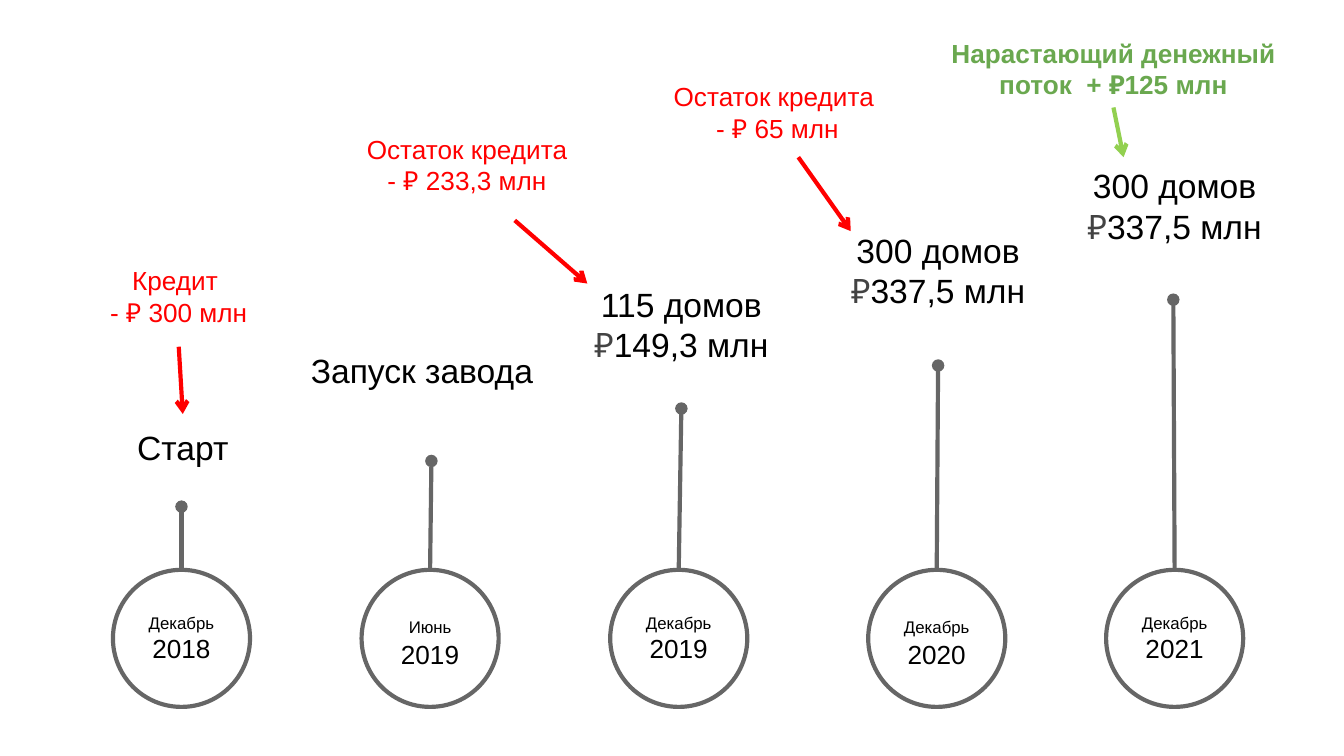
"""Build the house factory timeline slide: credit balance and sales by date."""
from lxml.etree import SubElement
from pptx import Presentation
from pptx.dml.color import RGBColor
from pptx.enum.shapes import MSO_CONNECTOR, MSO_SHAPE
from pptx.enum.text import MSO_ANCHOR as ANCHOR, MSO_AUTO_SIZE as AUTO, PP_ALIGN as ALIGN
from pptx.oxml.ns import qn
from pptx.util import Inches, Pt

BLACK = RGBColor(0, 0, 0)
GRAY = RGBColor(0x66, 0x66, 0x66)
DARK = RGBColor(0x43, 0x43, 0x43)
RED = RGBColor(0xFF, 0, 0)
GREEN = RGBColor(0x6A, 0xA8, 0x4F)
LIME = RGBColor(0x92, 0xD0, 0x50)

CIRCLE_TOP, CIRCLE_SIZE = 4.24, 1.02


def write(sp, paragraphs, size=18, color=BLACK, bold=False, anchor=ANCHOR.TOP, inset=0.1):
    tf = sp.text_frame
    tf.word_wrap = True
    tf.vertical_anchor = anchor
    tf.margin_left = tf.margin_right = Inches(0.1)
    tf.margin_top = tf.margin_bottom = Inches(inset)
    for i, runs in enumerate(paragraphs):
        p = tf.add_paragraph() if i else tf.paragraphs[0]
        p.alignment = ALIGN.CENTER
        for text, *own_size in runs:
            if text == "\n":
                p.add_line_break()
                continue
            r = p.add_run()
            r.text = text
            r.font.name = "Arial"
            r.font.size = Pt(own_size[0] if own_size else size)
            r.font.bold = bold
            r.font.color.rgb = DARK if text == "₽" else color


def add_line(start, end, color, end_tag, end_type):
    points = [Inches(v) for v in (*start, *end)]
    line = slide.shapes.add_connector(MSO_CONNECTOR.STRAIGHT, *points)
    line.line.color.rgb = color
    line.line.width = Pt(2.25)
    SubElement(line.line._get_or_add_ln(), qn(end_tag), type=end_type)
    SubElement(line._element.spPr, qn("a:effectLst"))
    return line


prs = Presentation()
prs.slide_width = Inches(10)
prs.slide_height = prs.slide_width * 9 // 16
slide = prs.slides.add_slide(prs.slide_layouts[6])

milestones = [
    (0.84, [[("Декабрь", 9)], [("2018", 14)]], (1.35, 3.77)),
    (2.69, [[("Июнь", 9), (" 2019", 14)]], (3.21, 3.43)),
    (4.54, [[("Декабрь", 9)], [("2019", 14)]], (5.07, 3.04)),
    (6.46, [[("Декабрь", 9), (" 2020", 14)]], (6.98, 2.72)),
    (8.23, [[("Декабрь ", 9), ("2021", 14)]], (8.73, 2.23)),
]
circles = []
for left, date, _ in milestones:
    circle = slide.shapes.add_shape(
        MSO_SHAPE.OVAL, Inches(left), Inches(CIRCLE_TOP), Inches(CIRCLE_SIZE), Inches(CIRCLE_SIZE))
    circle.shadow.inherit = False
    circle.fill.background()
    circle.line.color.rgb = GRAY
    circle.line.width = Pt(2.25)
    write(circle, date, anchor=ANCHOR.MIDDLE)
    circles.append(circle)

for circle, (left, _, top_point) in zip(circles, milestones):
    foot = (left + CIRCLE_SIZE / 2, CIRCLE_TOP)
    add_line(top_point, foot, GRAY, "a:headEnd", "oval").end_connect(circle, 0)

credit = dict(size=14, color=RED)
labels = [
    ("start", (0.72, 3.08, 1.28, 0.45), [[("Старт",)]], {}),
    ("sales 2019", (4.03, 2.01, 2.08, 0.88),
     [[("115 домов",), ("\n",), ("₽",), ("149,3 млн",)]], {}),
    ("launch", (2.19, 2.5, 1.9, 0.88), [[("Запуск завода",)]], {}),
    ("sales 2020", (5.94, 1.61, 2.08, 0.88),
     [[("300 домов",), ("\n",), ("₽",), ("337,5 млн",)]], {}),
    ("sales 2021", (7.66, 1.13, 2.16, 0.88),
     [[("300 домов",), ("\n",), ("₽",), ("337,5 млн",)]], {}),
    ("credit 2018", (0.16, 1.87, 2.34, 0.63), [[("Кредит ",)], [("- ₽ 300 млн",)]], credit),
    ("credit 2019", (1.95, 0.89, 3.05, 0.72),
     [[("Остаток кредита",)], [("- ₽ 233,3 млн",)]], credit),
    ("credit 2020", (4.3, 0.5, 2.97, 0.65),
     [[("Остаток кредита ",)], [("- ₽ 65 млн",)]], credit),
    ("cash flow", (6.8, 0.23, 2.97, 0.57), [[("Нарастающий денежный поток  + ₽125 млн",)]],
     dict(size=14, color=GREEN, bold=True, inset=0.05)),
]
boxes = {}
for name, place, paragraphs, style in labels:
    boxes[name] = slide.shapes.add_textbox(*[Inches(v) for v in place])
    write(boxes[name], paragraphs, **style)
boxes["cash flow"].text_frame.auto_size = AUTO.SHAPE_TO_FIT_TEXT

arrows = [
    ((8.28, 0.81), (8.36, 1.17), LIME, "cash flow", None),
    ((5.94, 1.17), (6.33, 1.72), RED, None, None),
    ((3.83, 1.64), (4.37, 2.11), RED, None, None),
    ((1.33, 2.58), (1.35, 3.08), RED, None, "start"),
]
for start, end, color, source, target in arrows:
    arrow = add_line(start, end, color, "a:tailEnd", "arrow")
    if source:
        arrow.begin_connect(boxes[source], 2)
    if target:
        arrow.end_connect(boxes[target], 0)

prs.save("out.pptx")
